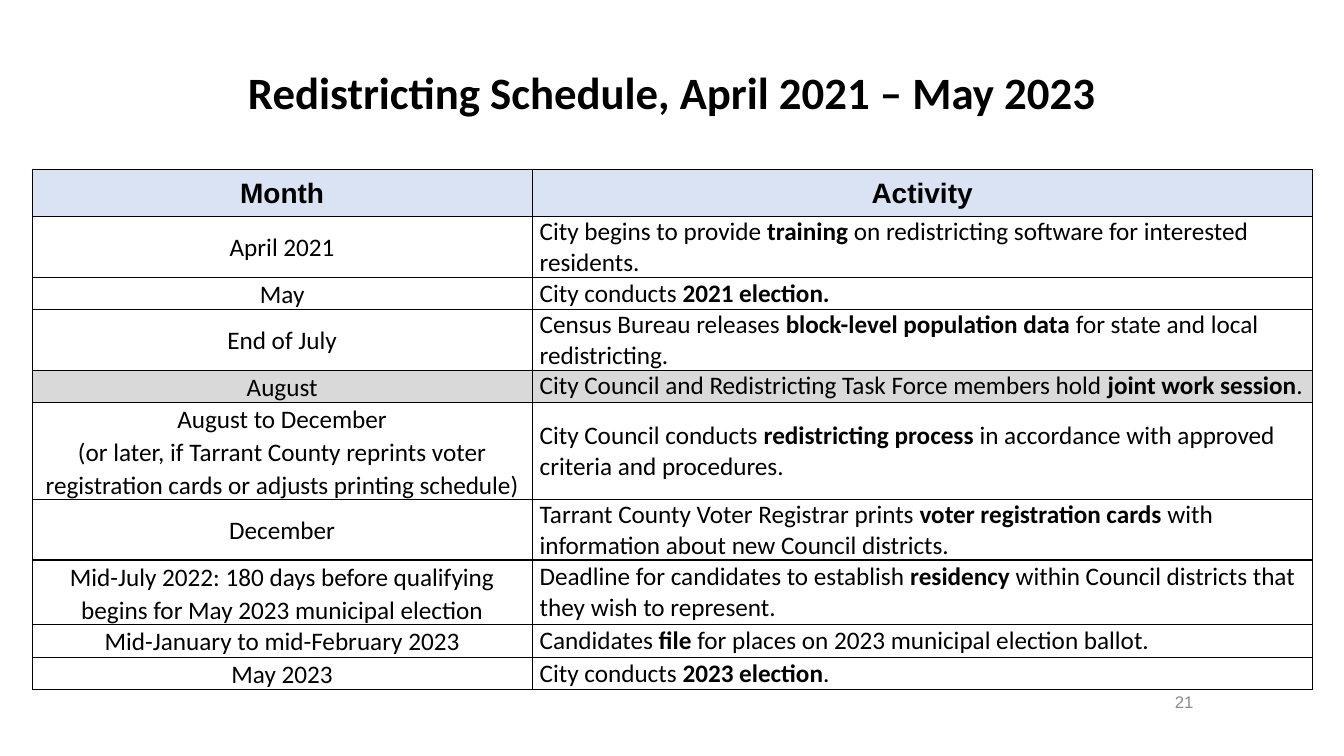
"""Build the redistricting schedule slide."""
from lxml import etree
from pptx import Presentation
from pptx.dml.color import RGBColor
from pptx.enum import text as t
from pptx.oxml import ns
from pptx.util import Cm, Pt

TITLE = "Redistricting Schedule, April 2021 – May 2023"
PAGE = "21"
HEAD = ("Month", "Activity")
ROWS = [
    ("April 2021", ("City begins to provide ", "training",
                    " on redistricting software for interested residents.")),
    ("May", ("City conducts ", "2021 election.")),
    ("End of July", ("Census Bureau releases ", "block-level population data ",
                     "for state and local redistricting.")),
    ("August", ("City Council and Redistricting Task Force members hold ",
                "joint work session", ".")),
    ("August to December\n(or later, if Tarrant County reprints voter "
     "registration cards or adjusts printing schedule)",
     ("City Council conducts ", "redistricting process ",
      "in accordance with approved criteria and procedures.")),
    ("December", ("Tarrant County Voter Registrar prints ",
                  "voter registration cards ",
                  "with information about new Council districts.")),
    ("Mid-July 2022: 180 days before qualifying begins for May 2023 "
     "municipal election",
     ("Deadline for candidates to establish ", "residency",
      " within Council districts that they wish to represent.")),
    ("Mid-January to mid-February 2023",
     ("Candidates ", "file ", "for places on 2023 municipal election ballot.")),
    ("May 2023", ("City conducts ", "2023 election", ".")),
]
FILLS = {0: "DAE3F3", 4: "D9D9D9"}
LEFT, WIDTHS = 0.81, (12.6, 19.66)
TALLS = [1.19] + [0.74] * 8 + [0.43]
BLACK = "000000"
MID, LEAD = t.PP_ALIGN.CENTER, 1.07


def style(para, face, size, tint=BLACK, bold=False, align=None, lead=None):
    font = para.font
    font.name, font.size, font.bold = face, Pt(size), bold
    font.color.rgb = RGBColor.from_string(tint)
    para.alignment = align
    para.line_spacing = lead


def border(cell):
    props = cell._tc.get_or_add_tcPr()
    for side in ("lnL", "lnR", "lnT", "lnB"):
        line = etree.SubElement(props, ns.qn("a:" + side), w=str(Pt(1)))
        solid = etree.SubElement(line, ns.qn("a:solidFill"))
        etree.SubElement(solid, ns.qn("a:srgbClr"), val=BLACK)


def dress(cell, tint):
    cell.margin_left = cell.margin_right = Cm(0.19)
    cell.margin_top = cell.margin_bottom = 0
    cell.vertical_anchor = t.MSO_ANCHOR.MIDDLE
    border(cell)
    if tint:
        cell.fill.solid()
        cell.fill.fore_color.rgb = RGBColor.from_string(tint)
    else:
        cell.fill.background()


def main():
    deck = Presentation()
    deck.slide_width, deck.slide_height = Cm(33.87), Cm(19.05)
    slide = deck.slides.add_slide(deck.slide_layouts[5])

    title = slide.shapes.title
    title.left, title.top = Cm(LEFT), Cm(1.63)
    title.width, title.height = Cm(sum(WIDTHS)), Cm(1.55)
    title.text_frame.text = TITLE
    title.text_frame.vertical_anchor = t.MSO_ANCHOR.MIDDLE
    style(title.text_frame.paragraphs[0], "Calibri", 32, bold=True,
          align=MID, lead=0.9)

    page = slide.shapes.add_textbox(Cm(22.71), Cm(17.17), Cm(7.62), Cm(1.02))
    page.text_frame.word_wrap = True
    page.text_frame.vertical_anchor = t.MSO_ANCHOR.MIDDLE
    page.text_frame.text = PAGE
    style(page.text_frame.paragraphs[0], "Arial", 12, "8C8C8C",
          align=t.PP_ALIGN.RIGHT)

    table = slide.shapes.add_table(
        len(TALLS), len(WIDTHS), Cm(LEFT), Cm(4.27),
        Cm(sum(WIDTHS)), Cm(sum(TALLS))).table
    table.horz_banding = False
    for col, width in zip(table.columns, WIDTHS):
        col.width = Cm(width)
    for num, (row, tall) in enumerate(zip(table.rows, TALLS)):
        row.height = Cm(tall)
        for cell in row.cells:
            dress(cell, FILLS.get(num))

    for col, label in enumerate(HEAD):
        cell = table.cell(0, col)
        cell.text = label
        style(cell.text_frame.paragraphs[0], "Arial", 20, bold=True,
              align=MID, lead=LEAD)
    for num, (month, parts) in enumerate(ROWS, 1):
        cell = table.cell(num, 0)
        cell.text = month
        for para in cell.text_frame.paragraphs:
            style(para, "Calibri", 18, align=MID, lead=LEAD)
        para = table.cell(num, 1).text_frame.paragraphs[0]
        style(para, "Calibri", 18)
        for spot, words in enumerate(parts):
            run = para.add_run()
            run.text = words
            if spot == 1:
                run.font.bold = True

    deck.save("out.pptx")


if __name__ == "__main__":
    main()
